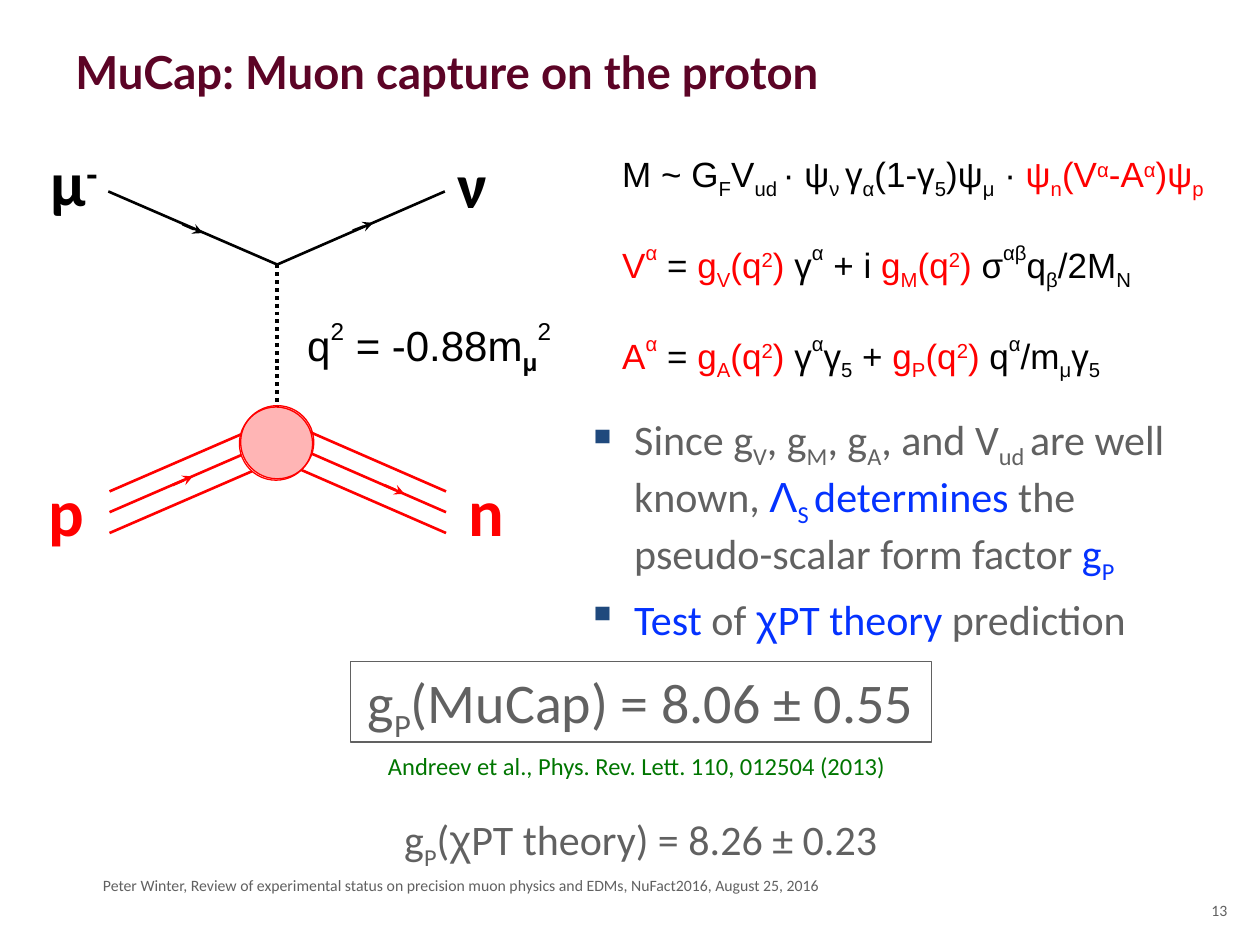
"""Build the slide on muon capture on the proton."""
from dataclasses import dataclass
from typing import NamedTuple, Optional

import pptx
import pptx.dml.color
import pptx.enum.dml
import pptx.enum.shapes
import pptx.enum.text
import pptx.oxml
import pptx.oxml.ns
import pptx.util
from lxml import etree

Pt = pptx.util.Pt
RGBColor = pptx.dml.color.RGBColor
PP_ALIGN = pptx.enum.text.PP_ALIGN
MSO_ANCHOR = pptx.enum.text.MSO_ANCHOR
MSO_SHAPE = pptx.enum.shapes.MSO_SHAPE
qn = pptx.oxml.ns.qn

BLACK = RGBColor(0x00, 0x00, 0x00)
WHITE = RGBColor(0xFF, 0xFF, 0xFF)
RED = RGBColor(0xFF, 0x00, 0x00)
GREY = RGBColor(0x61, 0x61, 0x61)
BLUE = RGBColor(0x04, 0x32, 0xFF)
NAVY = RGBColor(0x1F, 0x49, 0x7D)
MAROON = RGBColor(0x5C, 0x04, 0x26)
GREEN = RGBColor(0x00, 0x76, 0x00)
SUB, SUP, HIGH = -25, 30, 50


class Run(NamedTuple):
    text: str
    base: int = 0
    color: Optional[RGBColor] = None
    font: Optional[str] = None
    bold: Optional[bool] = None


class Line(NamedTuple):
    x1: float
    y1: float
    x2: float
    y2: float
    color: RGBColor = BLACK
    width: float = 1.5
    arrow: bool = False
    dotted: bool = False


@dataclass
class Label:
    x: float
    y: float
    w: float
    h: float
    paras: list
    size: float
    color: RGBColor = GREY
    font: str = "Calibri"
    bold: bool = False
    align: PP_ALIGN = PP_ALIGN.LEFT
    anchor: MSO_ANCHOR = MSO_ANCHOR.TOP
    wrap: bool = False
    inset: float = 3.6
    gap: float = 0
    bullet: bool = False
    boxed: bool = False
    fill: Optional[RGBColor] = None
    border: Optional[RGBColor] = None


def form_factor(name: str) -> list:
    """Return the red runs of a form factor at q squared."""
    return [Run("g", 0, RED), Run(name, SUB, RED), Run("(q", 0, RED),
            Run("2", SUP, RED), Run(") ", 0, RED)]


def add_bullet(p) -> None:
    """Give a paragraph a hanging square bullet."""
    pPr = p._p.get_or_add_pPr()
    pPr.set("marL", str(Pt(27)))
    pPr.set("indent", str(-Pt(27)))
    color = etree.SubElement(pPr, qn("a:buClr"))
    etree.SubElement(color, qn("a:srgbClr")).set("val", str(NAVY))
    etree.SubElement(pPr, qn("a:buChar")).set("char", "▪")


def add_run(p, run: Run, label: Label) -> None:
    """Append one run, or a line break, to a paragraph."""
    if run.text == "\n":
        p.add_line_break()
        return
    r = p.add_run()
    r.text = run.text
    r.font.size = Pt(label.size)
    r.font.name = run.font or label.font
    r.font.bold = label.bold if run.bold is None else run.bold
    r.font.color.rgb = run.color or label.color
    if run.base:
        r.font._element.set("baseline", str(run.base * 1000))


def add_label(s, label: Label) -> None:
    """Draw a text box or a text-bearing rectangle."""
    frame = Pt(label.x), Pt(label.y), Pt(label.w), Pt(label.h)
    if label.boxed:
        sp = s.shapes.add_shape(MSO_SHAPE.RECTANGLE, *frame)
        style_shape(sp, label.fill, label.border)
    else:
        sp = s.shapes.add_textbox(*frame)
    tf = sp.text_frame
    tf.word_wrap = label.wrap
    if not label.wrap:
        tf.auto_size = pptx.enum.text.MSO_AUTO_SIZE.SHAPE_TO_FIT_TEXT
    tf.vertical_anchor = label.anchor
    tf.margin_left = tf.margin_right = Pt(7.2)
    tf.margin_top = tf.margin_bottom = Pt(label.inset)
    for i, runs in enumerate(label.paras):
        p = tf.add_paragraph() if i else tf.paragraphs[0]
        p.alignment = label.align
        if i and label.gap:
            p.space_before = Pt(label.gap)
        if label.bullet:
            add_bullet(p)
        for run in runs:
            add_run(p, run, label)


def style_shape(sp, fill: Optional[RGBColor], border: Optional[RGBColor], alpha: int = 100) -> None:
    """Set the fill, its opacity and the outline of a shape."""
    sp.shadow.inherit = False
    if fill is None:
        sp.fill.background()
    else:
        sp.fill.solid()
        sp.fill.fore_color.rgb = fill
        if alpha < 100:
            color = sp._element.spPr.find(qn("a:solidFill"))[0]
            etree.SubElement(color, qn("a:alpha")).set("val", str(alpha * 1000))
    if border is None:
        sp.line.fill.background()
    else:
        sp.line.color.rgb = border
        sp.line.width = Pt(0.75)


def add_line(s, line: Line) -> None:
    """Draw a straight line, optionally dotted or with an arrowhead."""
    sp = s.shapes.add_connector(pptx.enum.shapes.MSO_CONNECTOR.STRAIGHT,
                                Pt(line.x1), Pt(line.y1), Pt(line.x2), Pt(line.y2))
    sp.line.color.rgb = line.color
    sp.line.width = Pt(line.width)
    if line.dotted:
        sp.line.dash_style = pptx.enum.dml.MSO_LINE.ROUND_DOT
    if line.arrow:
        etree.SubElement(sp.line._get_or_add_ln(), qn("a:tailEnd")).set("type", "stealth")
    etree.SubElement(sp._element.spPr, qn("a:effectLst"))


def main() -> None:
    """Assemble and save the slide."""
    prs = pptx.Presentation()
    prs.slide_width, prs.slide_height = Pt(720), Pt(540)
    s = prs.slides.add_slide(prs.slide_layouts[6])

    amplitude = [Run("M ~ G"), Run("F", SUB), Run("V"), Run("ud ", SUB), Run("· ψ"), Run("ν ", SUB),
                 Run("γ"), Run("α", SUB), Run("(1-γ"), Run("5", SUB), Run(")ψ"), Run("μ", SUB), Run(" · "),
                 Run("ψ", 0, RED), Run("n", SUB, RED), Run("(V", 0, RED), Run("α", SUP, RED),
                 Run("-A", 0, RED), Run("α", SUP, RED), Run(")ψ", 0, RED), Run("p", SUB, RED)]
    vector = [Run("V", 0, RED), Run("α", HIGH, RED), Run(" = "), *form_factor("V"), Run("γ"), Run("α", HIGH),
              Run(" + i "), *form_factor("M"), Run("σ"), Run("αβ", HIGH), Run("q"), Run("β", SUB),
              Run("/2M"), Run("N", SUB)]
    axial = [Run("A", 0, RED), Run("α", HIGH, RED), Run(" = "), *form_factor("A"), Run("γ"), Run("α", HIGH),
             Run("γ"), Run("5", SUB), Run(" + "), *form_factor("P"), Run("q"), Run("α", HIGH), Run("/m"),
             Run("μ", SUB), Run("γ"), Run("5", SUB)]
    known = [Run("Since g"), Run("V", SUB), Run(", g"), Run("M", SUB), Run(", g"), Run("A", SUB),
             Run(", and V"), Run("ud ", SUB), Run("are well known, "), Run("Λ", 0, BLUE, "Arial"),
             Run("S ", SUB, BLUE), Run("determines ", 0, BLUE), Run("the "), Run("\n"),
             Run("pseudo-scalar form factor "), Run("g", 0, BLUE), Run("P", SUB, BLUE)]
    test = [Run("Test", 0, BLUE), Run(" of "), Run("χ", 0, BLUE, "Arial"), Run("PT theory ", 0, BLUE),
            Run("prediction")]
    transfer = [Run("q"), Run("2", HIGH), Run(" = -0.88m"), Run("μ", SUB, bold=True), Run("2", HIGH)]
    theory = [Run("g"), Run("P", SUB), Run("("), Run("χ", font="Arial"), Run("PT theory) = 8.26 ± 0.23")]
    measured = [Run("g"), Run("P", SUB), Run("(MuCap) = 8.06 ± 0.55")]
    footer = "Peter Winter, Review of experimental status on precision muon physics and EDMs, NuFact2016, August 25, 2016"
    citation = "Andreev et al., Phys. Rev. Lett. 110, 012504 (2013)"
    center = PP_ALIGN.CENTER

    labels = [
        Label(36, 21.6, 648, 90, [[Run("MuCap: Muon capture on the proton")]], 26, MAROON, "Lato", True, wrap=True),
        Label(51.8, 496.8, 468, 18, [[Run(footer)]], 9, anchor=MSO_ANCHOR.MIDDLE, wrap=True),
        Label(678.2, 511.2, 30.2, 28.8, [[Run("13")]], 9, align=PP_ALIGN.RIGHT, wrap=True),
        Label(348.5, 77.8, 357.1, 131.8, [amplitude, vector, axial], 20, BLACK, "Arial",
              inset=9.4, gap=23, boxed=True, fill=WHITE),
        Label(253.4, 79.9, 33.1, 50.4, [[Run("ν")]], 36, BLACK, bold=True, align=center),
        Label(20.9, 78.5, 43.2, 50.4, [[Run("μ"), Run("-", SUP)]], 36, BLACK, bold=True, align=center),
        Label(19.4, 265, 37.4, 52.6, [[Run("p")]], 38, RED, bold=True, align=center),
        Label(259.2, 265, 37.4, 52.6, [[Run("n")]], 38, RED, bold=True, align=center),
        Label(168.5, 177.1, 158.4, 36.7, [transfer], 24, BLACK, "Arial"),
        Label(221.8, 461.5, 288.7, 36.7, [theory], 24, align=center),
        Label(200.2, 378, 331.9, 46.1, [measured], 32, align=center, boxed=True, border=GREY),
        Label(214.6, 425.5, 303.1, 24.5, [[Run(citation)]], 14, GREEN),
        Label(328.3, 232.6, 382.3, 223.2, [known, test], 24, wrap=True, gap=4.8, bullet=True),
    ]
    quarks = [Line(x, 280.8 + 11.9 * i, 159, 239 + 11.9 * i, RED) for i in range(3) for x in (62.6, 254.9)]
    leptons = [Line(x, 109.4, 158.4, 151.2) for x in (61.9, 254.2)]
    boson = Line(158.4, 151.2, 158.4, 241.2, width=2.25, dotted=True)
    arrows = [Line(104.4, 128.2, 115.9, 133.2, arrow=True), Line(201.6, 131.8, 213.1, 127.4, arrow=True),
              Line(98.6, 277.2, 110.2, 272.2, RED, arrow=True), Line(219.6, 277.2, 231.1, 282.2, RED, arrow=True)]

    for line in [*quarks, *leptons, boson, *arrows]:
        add_line(s, line)
    for x, y, fill, alpha in ((136.8, 232.6, WHITE, 100), (137.5, 231.8, RED, 29)):
        sp = s.shapes.add_shape(MSO_SHAPE.OVAL, Pt(x), Pt(y), Pt(41.8), Pt(41.8))
        style_shape(sp, fill, RED, alpha)
    for label in labels:
        add_label(s, label)
    prs.save("out.pptx")


if __name__ == "__main__":
    main()
